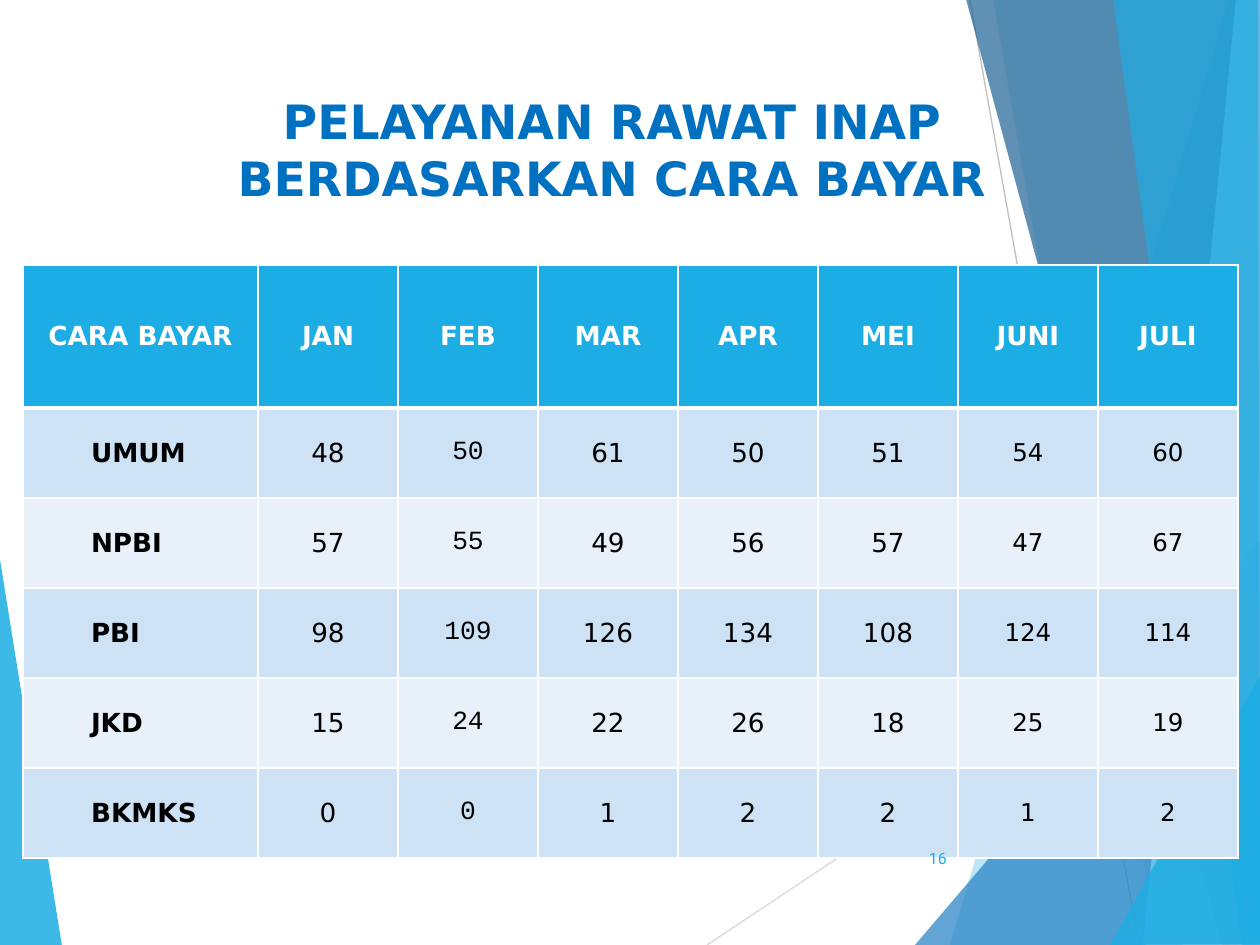
"""Build the slide on inpatient services by method of payment."""
from lxml import etree
from pptx import Presentation
from pptx.dml.color import RGBColor
from pptx.enum.shapes import MSO_CONNECTOR
from pptx.enum.text import MSO_ANCHOR, PP_ALIGN
from pptx.oxml.ns import qn
from pptx.util import Pt

PX = 914400 / 126
LEFT, CENTER, RIGHT = PP_ALIGN.LEFT, PP_ALIGN.CENTER, PP_ALIGN.RIGHT
TOP, MIDDLE = MSO_ANCHOR.TOP, MSO_ANCHOR.MIDDLE
STRAIGHT = MSO_CONNECTOR.STRAIGHT

WHITE = RGBColor(0xFF, 0xFF, 0xFF)
BLACK = RGBColor(0x00, 0x00, 0x00)
SKY = RGBColor(0x1C, 0xAD, 0xE4)
BLUE = RGBColor(0x26, 0x83, 0xC6)
NAVY = RGBColor(0x1D, 0x62, 0x94)
PALE = RGBColor(0x77, 0xCE, 0xEF)
TITLE_BLUE = RGBColor(0x00, 0x70, 0xC0)
BAND_DARK = RGBColor(0xCD, 0xE3, 0xF5)
BAND_LIGHT = RGBColor(0xE8, 0xF1, 0xFA)
GRAY = RGBColor(0xBF, 0xBF, 0xBF)
LIGHT_GRAY = RGBColor(0xD9, 0xD9, 0xD9)


def px(value):
    return round(value * PX)


def write(frame, text, size=15, font="DejaVu Sans", color=BLACK, bold=False, align=CENTER, indent=0):
    paragraph = frame.paragraphs[0]
    paragraph.text = text
    paragraph.alignment = align
    if indent:
        paragraph._p.get_or_add_pPr().set("marL", str(px(indent)))
    paragraph.font.size = Pt(size)
    for run in paragraph.runs:
        run.font.size = Pt(size)
        run.font.name = font
        run.font.color.rgb = color
        run.font.bold = bold


presentation = Presentation()
presentation.slide_width = px(1260)
presentation.slide_height = px(945)
slide = presentation.slides.add_slide(presentation.slide_layouts[6])
shapes = slide.shapes

left_facet = ([(-1, 553), (62, 946), (-1, 945)], SKY, 85)
right_facets = [
    ([(1229, 0), (950, 945), (1262, 946), (1261, 1)], SKY, 30),
    ([(993, -1), (1158, 945), (1261, 945), (1261, -1)], SKY, 20),
    ([(915, 945), (1260, 541), (1261, 945)], BLUE, 72),
    ([(966, -1), (1222, 945), (1261, 944), (1261, -1)], NAVY, 70),
    ([(1236, -1), (1143, 945), (1261, 945), (1260, -1)], PALE, 70),
    ([(1113, -1), (1242, 945), (1260, 945), (1258, -1)], SKY, 65),
    ([(1110, 945), (1261, 674), (1261, 944)], SKY, 80),
]
rays = [(707, 945, 1261, 576, LIGHT_GRAY), (970, 0, 1139, 945, GRAY)]

for x1, y1, x2, y2, color in rays:
    ray = shapes.add_connector(STRAIGHT, px(x1), px(y1), px(x2), px(y2))
    ray.line.color.rgb = color
    ray.line.width = Pt(0.75)
    etree.SubElement(ray._element.spPr, qn("a:effectLst"))

for points, color, opacity in [left_facet] + right_facets:
    builder = shapes.build_freeform(*points[0], scale=PX)
    builder.add_line_segments(points[1:], close=True)
    facet = builder.convert_to_shape()
    facet.shadow.inherit = False
    facet.line.fill.background()
    facet.fill.solid()
    facet.fill.fore_color.rgb = color
    fill_color = facet._element.spPr.find(qn("a:solidFill"))[0]
    etree.SubElement(fill_color, qn("a:alpha"), val=str(opacity * 1000))

title = shapes.add_textbox(px(53), px(86), px(1134), px(157)).text_frame
title.word_wrap = True
title.vertical_anchor = TOP
write(title, "PELAYANAN RAWAT INAP \vBERDASARKAN CARA BAYAR ", size=27, color=TITLE_BLUE, bold=True)

rows = [
    ("CARA BAYAR", "JAN", "FEB", "MAR", "APR", "MEI", "JUNI", "JULI"),
    ("UMUM", 48, 50, 61, 50, 51, 54, 60),
    ("NPBI", 57, 55, 49, 56, 57, 47, 67),
    ("PBI", 98, 109, 126, 134, 108, 124, 114),
    ("JKD", 15, 24, 22, 26, 18, 25, 19),
    ("BKMKS", 0, 0, 1, 2, 2, 1, 2),
]
column_widths = [235] + [140] * 7
row_heights = [143] + [90] * 5
table = shapes.add_table(
    len(rows), len(column_widths), px(23), px(265), px(sum(column_widths)), px(sum(row_heights))
).table
for column, width in zip(table.columns, column_widths):
    column.width = px(width)
for row, height in zip(table.rows, row_heights):
    row.height = px(height)

for r, values in enumerate(rows):
    for c, value in enumerate(values):
        cell = table.cell(r, c)
        cell.vertical_anchor = MIDDLE
        padded = r == 0 or c < 2
        cell.margin_left = cell.margin_right = px(19 if padded else 0)
        cell.margin_top = cell.margin_bottom = px(9 if padded else 0)
        cell.fill.solid()
        if r == 0:
            cell.fill.fore_color.rgb = SKY
            write(cell.text_frame, value, color=WHITE, bold=True)
        else:
            cell.fill.fore_color.rgb = BAND_DARK if r % 2 else BAND_LIGHT
            if c == 0:
                write(cell.text_frame, value, bold=True, align=LEFT, indent=49)
            else:
                font = "Courier New" if c == 2 else "DejaVu Sans"
                write(cell.text_frame, str(value), size=14 if c > 5 else 15, font=font)
        borders = {"lnL": 1, "lnR": 1, "lnT": 3 if r == 1 else 1, "lnB": 3 if r == 0 else 1}
        for position, (side, width) in enumerate(borders.items()):
            border = etree.Element(qn(f"a:{side}"), w=str(Pt(width)))
            solid = etree.SubElement(border, qn("a:solidFill"))
            etree.SubElement(solid, qn("a:srgbClr"), val=str(WHITE))
            cell._tc.get_or_add_tcPr().insert(position, border)

page_number = shapes.add_textbox(px(888), px(833), px(71), px(50)).text_frame
page_number.word_wrap = True
page_number.vertical_anchor = MIDDLE
write(page_number, "16", size=9, font="Roboto", color=SKY, align=RIGHT)

presentation.save("out.pptx")
